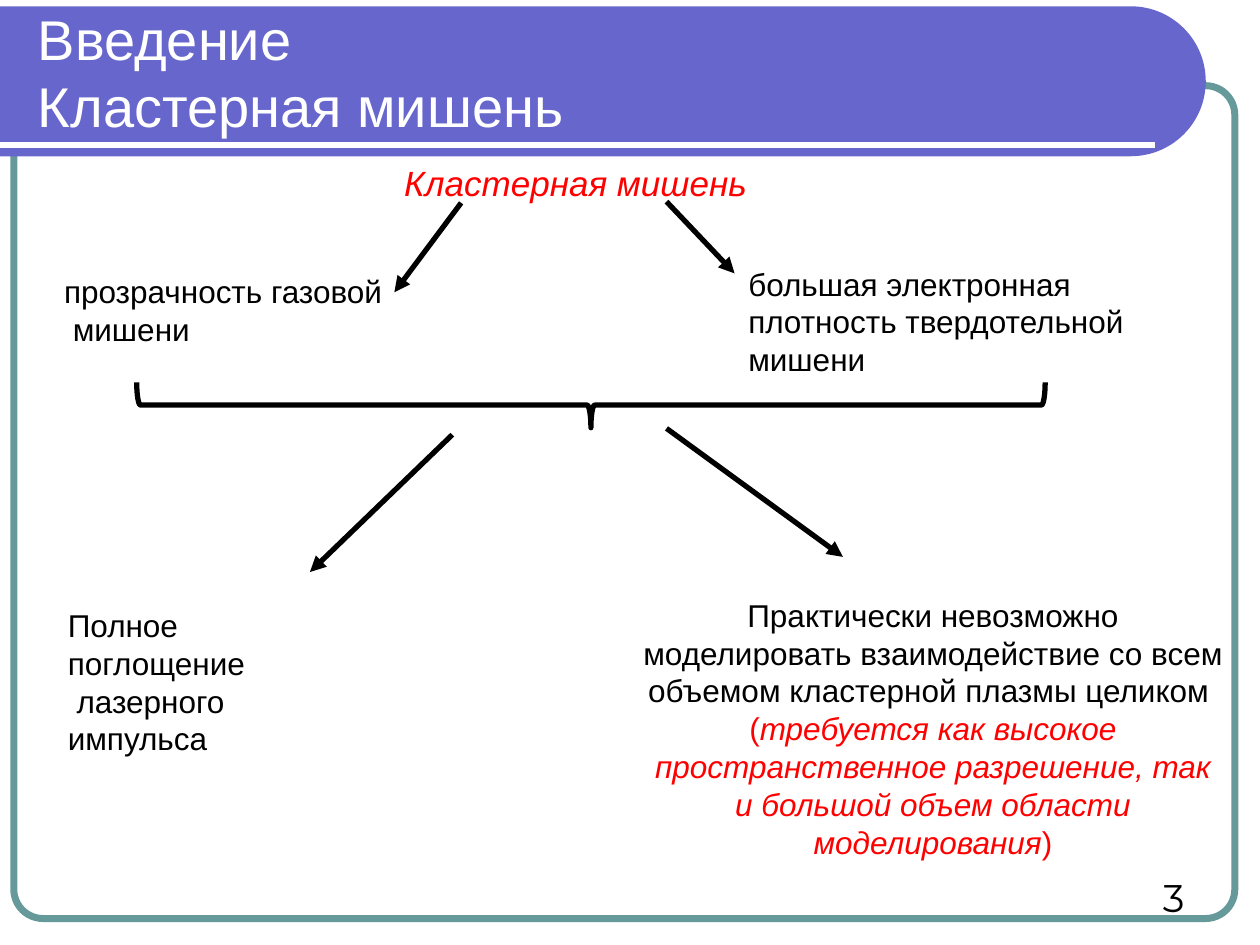
from math import cos, pi, sin
from typing import NamedTuple

from lxml.etree import SubElement
from pptx import Presentation
from pptx.dml.color import RGBColor
from pptx.enum.shapes import MSO_CONNECTOR, MSO_SHAPE
from pptx.enum.text import MSO_ANCHOR as Anchor, MSO_AUTO_SIZE as AutoSize, PP_ALIGN as Align
from pptx.oxml.ns import qn
from pptx.util import Inches, Pt

BLACK = RGBColor(0x00, 0x00, 0x00)
WHITE = RGBColor(0xFF, 0xFF, 0xFF)
RED = RGBColor(0xFF, 0x00, 0x00)
TEAL = RGBColor(0x66, 0x99, 0x99)
VIOLET = RGBColor(0x66, 0x66, 0xCC)


class Box(NamedTuple):
    left: float
    top: float
    width: float
    height: float

    def lengths(self) -> list:
        return [Inches(value) for value in self]


class Line(NamedTuple):
    start: tuple
    end: tuple


class Run(NamedTuple):
    text: str
    color: RGBColor = BLACK
    italic: bool = False


class Label(NamedTuple):
    box: Box
    paragraphs: list
    style: dict


LABELS = [
    Label(Box(3.11, 1.23, 2.94, 0.44), [[Run("Кластерная мишень", RED, True)]], {"size": 20}),
    Label(Box(0.41, 2.11, 2.75, 0.71), [[Run("прозрачность газовой")], [Run(" мишени")]], {}),
    Label(
        Box(5.84, 2.05, 3.28, 1.01),
        [[Run("большая электронная")], [Run("плотность твердотельной")], [Run("мишени")]],
        {},
    ),
    Label(
        Box(0.44, 4.76, 2.44, 1.31),
        [[Run("Полное поглощение")], [Run(" лазерного импульса")]],
        {"wrap": True},
    ),
    Label(
        Box(5, 4.68, 4.81, 1.92),
        [[
            Run("Практически невозможно моделировать взаимодействие со всем "
                "объемом кластерной плазмы целиком \n"),
            Run("(", RED),
            Run("требуется как высокое пространственное разрешение, "
                "так и большой объем области моделирования", RED, True),
            Run(")", RED),
        ]],
        {"wrap": True, "align": Align.CENTER},
    ),
    Label(
        Box(7.17, 6.83, 2.33, 0.52),
        [[Run("3")]],
        {"size": 22, "font": "Montserrat", "wrap": True, "align": Align.RIGHT,
         "anchor": Anchor.BOTTOM, "auto_size": AutoSize.NONE},
    ),
]

ARROWS = [
    Line((3.66, 1.61), (3.13, 2.32)),
    Line((5.29, 1.6), (5.83, 2.17)),
    Line((3.59, 3.45), (2.46, 4.54)),
    Line((5.29, 3.4), (6.69, 4.42)),
]


def write_text(shape, paragraphs: list, *, size: float = 18, font: str = "Arial",
               align=Align.LEFT, anchor=Anchor.TOP, wrap: bool = False,
               auto_size=AutoSize.SHAPE_TO_FIT_TEXT) -> None:
    frame = shape.text_frame
    frame.word_wrap = wrap
    frame.auto_size = auto_size
    frame.vertical_anchor = anchor
    for index, runs in enumerate(paragraphs):
        paragraph = frame.add_paragraph() if index else frame.paragraphs[0]
        paragraph.alignment = align
        for item in runs:
            for number, part in enumerate(item.text.split("\n")):
                if number:
                    paragraph.add_line_break()
                if part:
                    run = paragraph.add_run()
                    run.text = part
                    run.font.name = font
                    run.font.size = Pt(size)
                    run.font.italic = item.italic
                    run.font.color.rgb = item.color


def add_outline(slide, kind: MSO_SHAPE, box: Box, color: RGBColor, weight: float):
    shape = slide.shapes.add_shape(kind, *box.lengths())
    shape.shadow.inherit = False
    shape.fill.background()
    shape.line.color.rgb = color
    shape.line.width = Pt(weight)
    return shape


def add_line(slide, line: Line, color: RGBColor, arrow: bool = False) -> None:
    ends = [Inches(value) for value in (*line.start, *line.end)]
    connector = slide.shapes.add_connector(MSO_CONNECTOR.STRAIGHT, *ends)
    connector.line.color.rgb = color
    connector.line.width = Pt(3)
    if arrow:
        SubElement(connector.line._get_or_add_ln(), qn("a:tailEnd"), type="triangle")
    SubElement(connector.element.spPr, qn("a:effectLst"))


def add_banner(slide, top: float, bottom: float, right: float) -> None:
    radius = (bottom - top) / 2
    center_x, center_y = right - radius, top + radius
    steps = 60
    angles = [-pi / 2 + pi * step / steps for step in range(steps + 1)]
    arc = [(Inches(center_x + radius * cos(angle)), Inches(center_y + radius * sin(angle)))
           for angle in angles]
    builder = slide.shapes.build_freeform(0, Inches(top))
    builder.add_line_segments([*arc, (0, Inches(bottom))], close=True)
    banner = builder.convert_to_shape()
    banner.shadow.inherit = False
    banner.fill.solid()
    banner.fill.fore_color.rgb = VIOLET
    banner.line.fill.background()


def add_title(slide, box: Box, text: str) -> None:
    title = slide.shapes.title
    title.left, title.top, title.width, title.height = box.lengths()
    write_text(title, [[Run(text, WHITE)]], size=32, anchor=Anchor.MIDDLE,
               wrap=True, auto_size=AutoSize.NONE)
    title.element.getparent().append(title.element)


def main() -> None:
    presentation = Presentation()
    presentation.slide_width, presentation.slide_height = Inches(10), Inches(7.5)
    slide = presentation.slides.add_slide(presentation.slide_layouts[5])

    border = add_outline(slide, MSO_SHAPE.ROUNDED_RECTANGLE, Box(0.11, 0.68, 9.69, 6.61), TEAL, 4)
    border.adjustments[0] = 0.035
    add_banner(slide, top=0.05, bottom=1.24, right=9.57)
    add_line(slide, Line((0, 1.15), (9.17, 1.15)), WHITE)

    for arrow in ARROWS:
        add_line(slide, arrow, BLACK, arrow=True)
    brace = add_outline(slide, MSO_SHAPE.LEFT_BRACE, Box(4.51, -0.39, 0.36, 7.21), BLACK, 3)
    brace.rotation = 270
    for label in LABELS:
        text_box = slide.shapes.add_textbox(*label.box.lengths())
        write_text(text_box, label.paragraphs, **label.style)
    add_title(slide, Box(0.2, 0.07, 8.98, 1), "Введение\nКластерная мишень")

    presentation.save("out.pptx")


if __name__ == "__main__":
    main()
